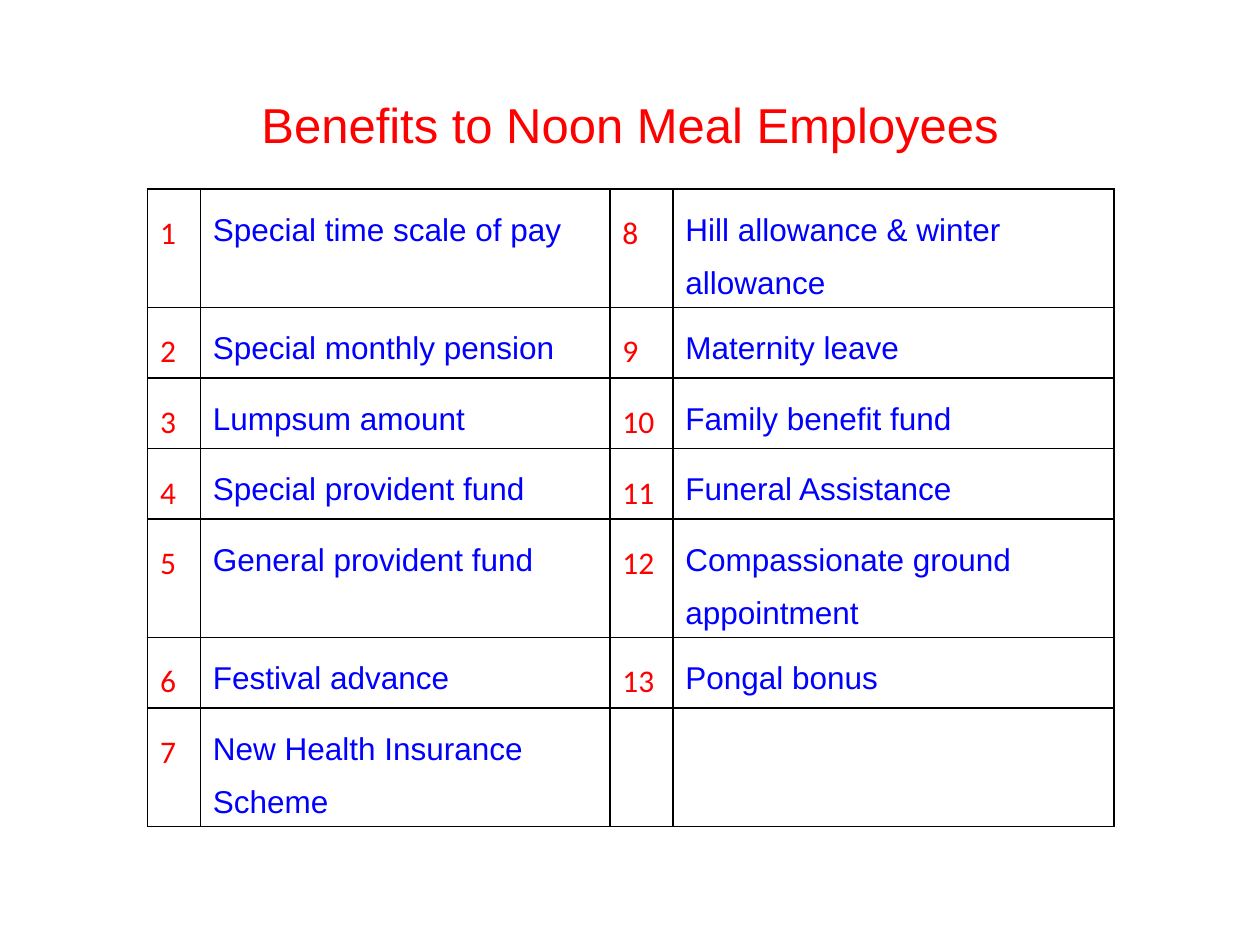
from lxml import etree
from pptx import Presentation, util as u
from pptx.dml.color import RGBColor
from pptx.enum import text
from pptx.oxml.ns import qn

RED = RGBColor(0xFF, 0x00, 0x00)
BLUE = RGBColor(0x00, 0x00, 0xFF)
BLACK = RGBColor(0x00, 0x00, 0x00)

COLUMN_WIDTHS = [0.42, 3.25, 0.5, 3.5]
ONE_LINE, TWO_LINES = 0.56, 0.94
ROW_HEIGHTS = [TWO_LINES, ONE_LINE, ONE_LINE, ONE_LINE,
               TWO_LINES, ONE_LINE, TWO_LINES]

BENEFITS = [
    "Special time scale of pay",
    "Special monthly pension",
    "Lumpsum amount",
    "Special provident fund",
    "General provident fund",
    "Festival advance",
    "New Health Insurance Scheme",
    "Hill allowance & winter allowance",
    "Maternity leave",
    "Family benefit fund",
    "Funeral Assistance",
    "Compassionate ground\nappointment",
    "Pongal bonus",
]


def add_span(para, wording, font, size, color):
    span = para.add_run()
    span.text = wording
    span.font.name = font
    span.font.size = u.Pt(size)
    span.font.color.rgb = color


def add_title(page, wording):
    box = page.shapes.title
    box.left, box.top = u.Inches(0.58), u.Inches(0.58)
    box.width, box.height = u.Inches(8.84), u.Inches(0.8)
    box.text_frame.vertical_anchor = text.MSO_ANCHOR.MIDDLE
    para = box.text_frame.paragraphs[0]
    para.alignment = text.PP_ALIGN.CENTER
    add_span(para, wording, "Arial", 28, RED)


def fill_cell(cell, wording, font, color):
    frame = cell.text_frame
    for index, line in enumerate(wording.split("\n")):
        para = frame.add_paragraph() if index else frame.paragraphs[0]
        para.line_spacing = 1.5
        add_span(para, line, font, 18, color)


def style_cell(cell):
    """Give the cell a thin black border and no fill."""
    properties = cell._tc.get_or_add_tcPr()
    for side in ("a:lnL", "a:lnR", "a:lnT", "a:lnB"):
        line = etree.SubElement(properties, qn(side), w=str(u.Pt(1)))
        fill = etree.SubElement(line, qn("a:solidFill"))
        etree.SubElement(fill, qn("a:srgbClr"), val=str(BLACK))
    cell.fill.background()


def add_benefits_table(page):
    rows = len(ROW_HEIGHTS)
    table = page.shapes.add_table(
        rows, len(COLUMN_WIDTHS), u.Inches(1.17), u.Inches(1.5),
        u.Inches(sum(COLUMN_WIDTHS)), u.Inches(sum(ROW_HEIGHTS))).table
    table.first_row = table.horz_banding = False
    for column, width in zip(table.columns, COLUMN_WIDTHS):
        column.width = u.Inches(width)
    for row, height in zip(table.rows, ROW_HEIGHTS):
        row.height = u.Inches(height)
    for cell in table.iter_cells():
        style_cell(cell)

    # Numbers run down the left pair of columns, then down the right pair
    for index, benefit in enumerate(BENEFITS):
        pair, row = divmod(index, rows)
        fill_cell(table.cell(row, 2 * pair), str(index + 1), "Calibri", RED)
        fill_cell(table.cell(row, 2 * pair + 1), benefit, "Arial", BLUE)


def main():
    deck = Presentation()
    deck.slide_width, deck.slide_height = u.Inches(10), u.Inches(7.5)
    page = deck.slides.add_slide(deck.slide_layouts.get_by_name("Title Only"))
    add_title(page, "Benefits to Noon Meal Employees")
    add_benefits_table(page)
    deck.save("out.pptx")


if __name__ == "__main__":
    main()
